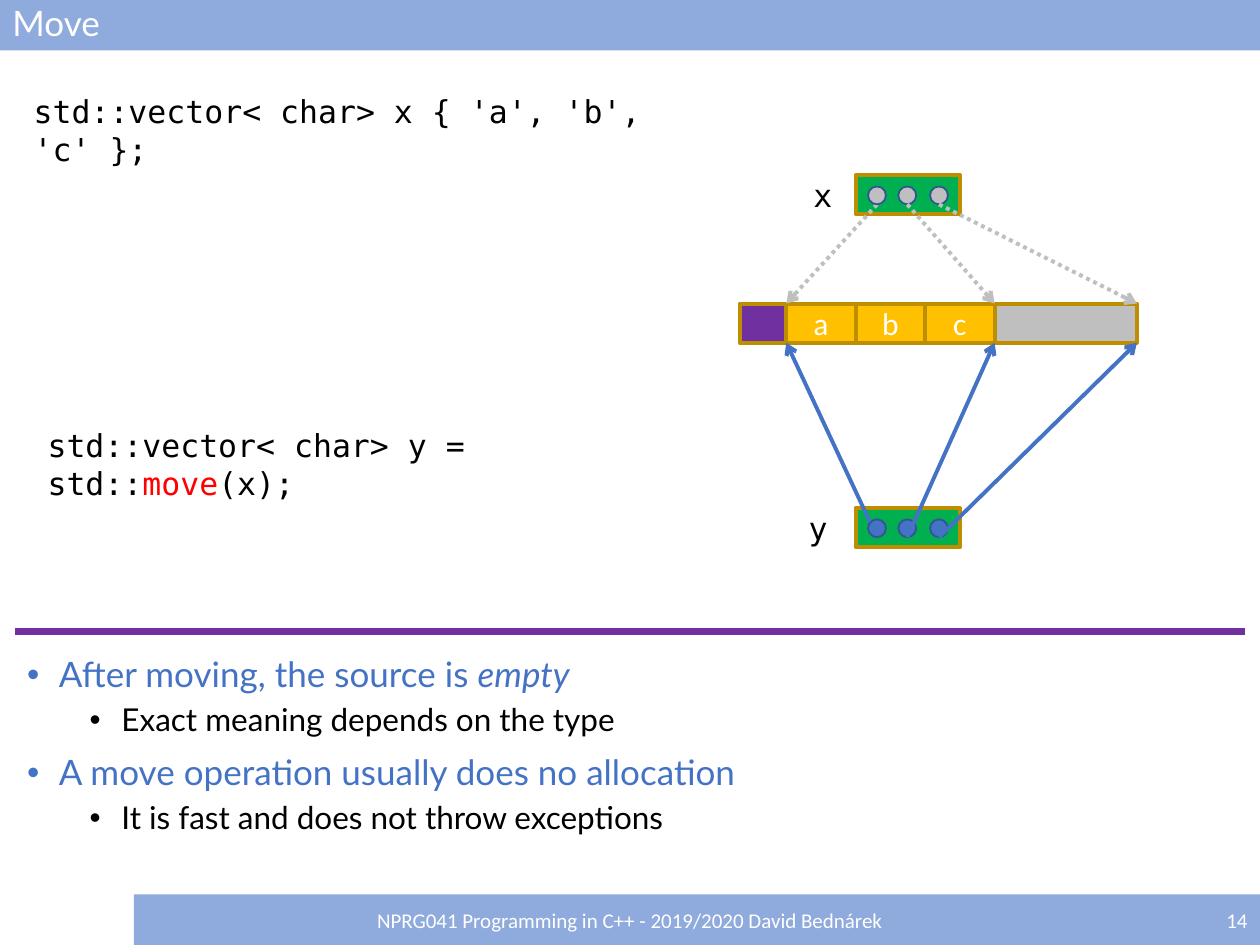
from lxml import etree
from pptx import Presentation
from pptx.dml.color import RGBColor
from pptx.enum.dml import MSO_LINE
from pptx.enum.shapes import MSO_CONNECTOR, MSO_SHAPE
from pptx.enum.text import MSO_ANCHOR, PP_ALIGN
from pptx.oxml.ns import qn
from pptx.util import Cm, Pt

RECT, OVAL = MSO_SHAPE.RECTANGLE, MSO_SHAPE.OVAL
STRAIGHT = MSO_CONNECTOR.STRAIGHT
LEFT, CENTER, RIGHT = PP_ALIGN.LEFT, PP_ALIGN.CENTER, PP_ALIGN.RIGHT
MIDDLE = MSO_ANCHOR.MIDDLE
DOTTED = MSO_LINE.ROUND_DOT

BAR, BLUE, PURPLE, GREEN = "8FAADC", "4472C4", "7030A0", "00B050"
AMBER, GREY, GOLD, NAVY = "FFC000", "BFBFBF", "BD8E00", "325491"
WHITE, BLACK, RED = "FFFFFF", "000000", "FF0000"
MONO = "DejaVu Sans Mono"


def rgb(color):
    return RGBColor.from_string(color)


def add_run(p, text, size, font, color, italic=False):
    r = p.add_run()
    r.text = text
    r.font.size, r.font.name = Pt(size), font
    r.font.color.rgb = rgb(color)
    if italic:
        r.font.italic = True


def add_box(s, x, y, w, h, fill, line=None, width=2.25, kind=RECT):
    sp = s.shapes.add_shape(kind, Cm(x), Cm(y), Cm(w), Cm(h))
    sp.shadow.inherit = False
    sp.fill.solid()
    sp.fill.fore_color.rgb = rgb(fill)
    if line:
        sp.line.color.rgb = rgb(line)
        sp.line.width = Pt(width)
    else:
        sp.line.fill.background()
    return sp


def add_label(sp, text, size, font="Calibri", align=CENTER):
    tf = sp.text_frame
    tf.vertical_anchor = MIDDLE
    p = tf.paragraphs[0]
    p.alignment = align
    add_run(p, text, size, font, WHITE)


def add_line(s, x1, y1, x2, y2, color, width, dash=None, arrow=False):
    c = s.shapes.add_connector(STRAIGHT, Cm(x1), Cm(y1), Cm(x2), Cm(y2))
    c.line.color.rgb = rgb(color)
    c.line.width = Pt(width)
    if dash:
        c.line.dash_style = dash
    if arrow:
        ln = c.line._get_or_add_ln()
        etree.SubElement(ln, qn("a:tailEnd"), type="arrow")
    etree.SubElement(c._element.spPr, qn("a:effectLst"))


def add_code(s, x, y, w, parts, wrap=True):
    sp = s.shapes.add_textbox(Cm(x), Cm(y), Cm(w), Cm(1.02))
    sp.text_frame.word_wrap = wrap
    for text, color in parts:
        add_run(sp.text_frame.paragraphs[0], text, 18, MONO, color)


def add_bars(s, title, footer, number):
    bar_h, foot_y = 1.02, 18.03
    bar = add_box(s, 0, 0, 25.4, bar_h, BAR)
    add_label(bar, title, 20, "Lato", LEFT)
    bar.text_frame.paragraphs[0].line_spacing = 0.9
    add_label(add_box(s, 22.7, foot_y, 2.7, bar_h, BAR), number, 12, align=RIGHT)
    add_label(add_box(s, 2.7, foot_y, 20, bar_h, BAR), footer, 12)


def add_bullets(s, x, y, w, h, items):
    """Each item is a level and a list of (text, italic) pieces."""
    styles = [(20, BLUE, 10, 0.64), (18, BLACK, 5, 1.9)]
    tf = s.shapes.add_textbox(Cm(x), Cm(y), Cm(w), Cm(h)).text_frame
    tf.word_wrap = True
    for i, (level, pieces) in enumerate(items):
        size, color, before, margin = styles[level]
        p = tf.paragraphs[0] if i == 0 else tf.add_paragraph()
        p.level, p.line_spacing, p.space_before = level, 0.9, Pt(before)
        pPr = p._p.get_or_add_pPr()
        pPr.set("marL", str(Cm(margin)))
        pPr.set("indent", str(-Cm(0.64)))
        etree.SubElement(pPr, qn("a:buFont"), typeface="Arial")
        etree.SubElement(pPr, qn("a:buChar"), char="•")
        for text, italic in pieces:
            add_run(p, text, size, "Lato", color, italic)


def add_buffer(s, x, y, h, cells):
    """Draws adjoining memory cells and returns their left edges and the end."""
    edges = [x]
    for text, w, fill in cells:
        sp = add_box(s, edges[-1], y, w, h, fill, GOLD)
        if text:
            add_label(sp, text, 18)
        edges.append(edges[-1] + w)
    return edges


def add_vector(s, x, y, h, name, name_x, color, targets, target_y, dash=None):
    """Draws a vector header whose three pointers lead to the targets."""
    dot = 0.36
    centers = [x + dx for dx in (0.43, 1.04, 1.68)]
    dot_y = y + 0.23

    def add_pointer(i):
        add_line(s, centers[i], dot_y + dot, targets[i], target_y,
                 color, 2.25, dash, arrow=True)

    add_box(s, x, y, 2.1, h, GREEN, GOLD)
    add_pointer(0)
    for cx in centers:
        add_box(s, cx - dot / 2, dot_y, dot, dot, color, NAVY, 1, OVAL)
    add_pointer(1)
    add_pointer(2)
    add_code(s, name_x, y - 0.1, 0.86, [(name, BLACK)], wrap=False)


def add_diagram(s, x, y):
    h, buffer_y = 0.79, y + 2.59
    letters = [(c, 1.4, AMBER) for c in "abc"]
    edges = add_buffer(s, x, buffer_y, h,
                       [("", 0.94, PURPLE), *letters, ("", 2.87, GREY)])
    targets = [edges[1], edges[4], edges[5]]
    header_x = edges[2]
    add_vector(s, header_x, y, h, "x", header_x - 1.1, GREY,
               targets, buffer_y, DOTTED)
    add_vector(s, header_x, y + 6.71, h, "y", header_x - 1.2, BLUE,
               targets, buffer_y + h)


def main():
    prs = Presentation()
    prs.slide_width, prs.slide_height = Cm(25.4), Cm(19.05)
    s = prs.slides.add_slide(prs.slide_layouts[6])
    add_line(s, 0.3, 12.73, 25.1, 12.73, PURPLE, 4)
    add_bullets(s, 0.3, 13.13, 24.8, 4.8, [
        (0, [("After moving, the source is ", False), ("empty", True)]),
        (1, [("Exact meaning depends on the type", False)]),
        (0, [("A move operation usually does no allocation", False)]),
        (1, [("It is fast and does not throw exceptions", False)]),
    ])
    add_bars(s, "Move",
             "NPRG041 Programming in C++ - 2019/2020 David Bednárek", "14")
    add_code(s, 0.43, 1.73, 14.22,
             [("std::vector< char> x { 'a', 'b', 'c' };", BLACK)])
    add_code(s, 0.71, 8.46, 13.18,
             [("std::vector< char> y = std::", BLACK), ("move", RED),
              ("(x);", BLACK)])
    add_diagram(s, 14.91, 3.53)
    prs.save("out.pptx")


if __name__ == "__main__":
    main()
